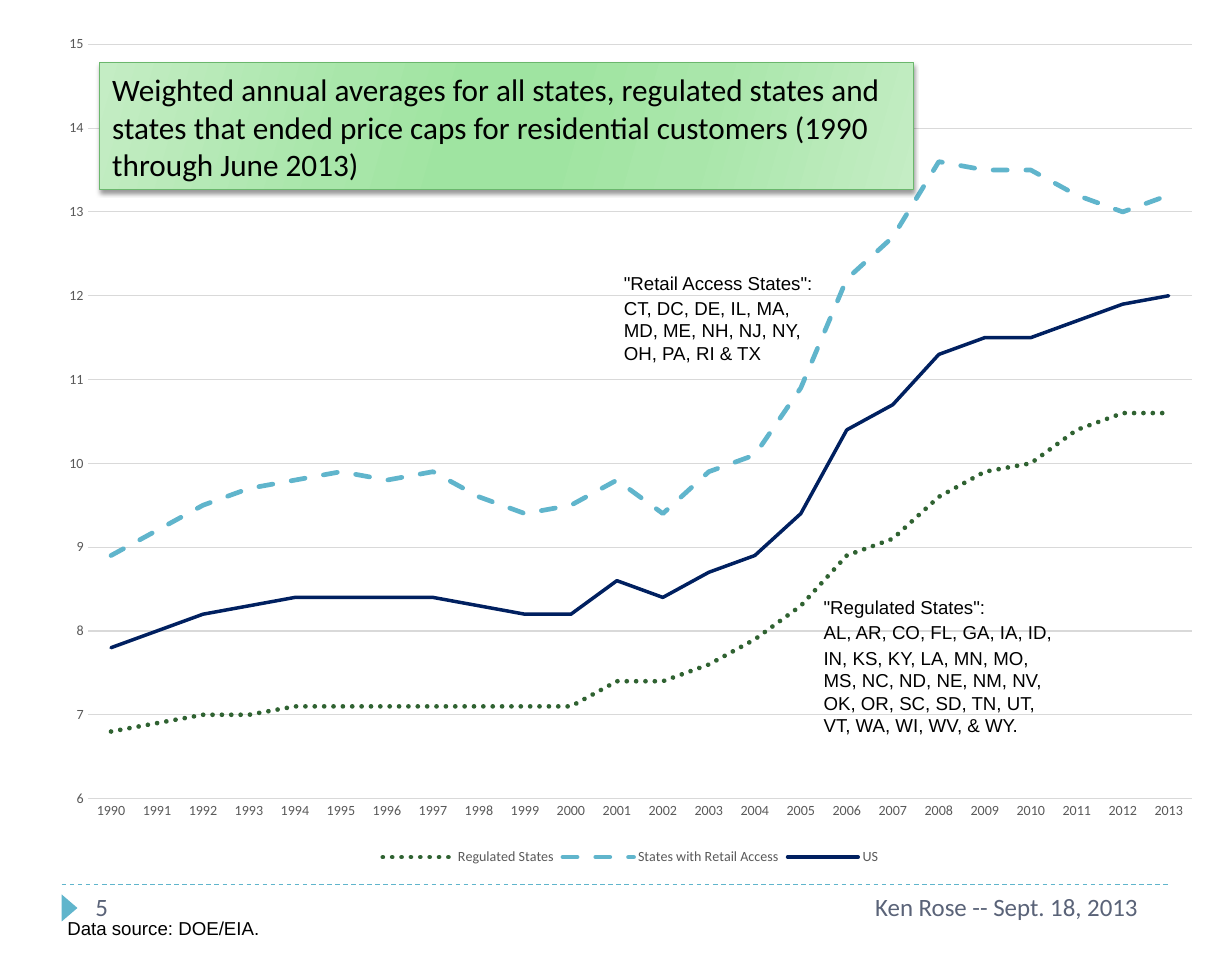
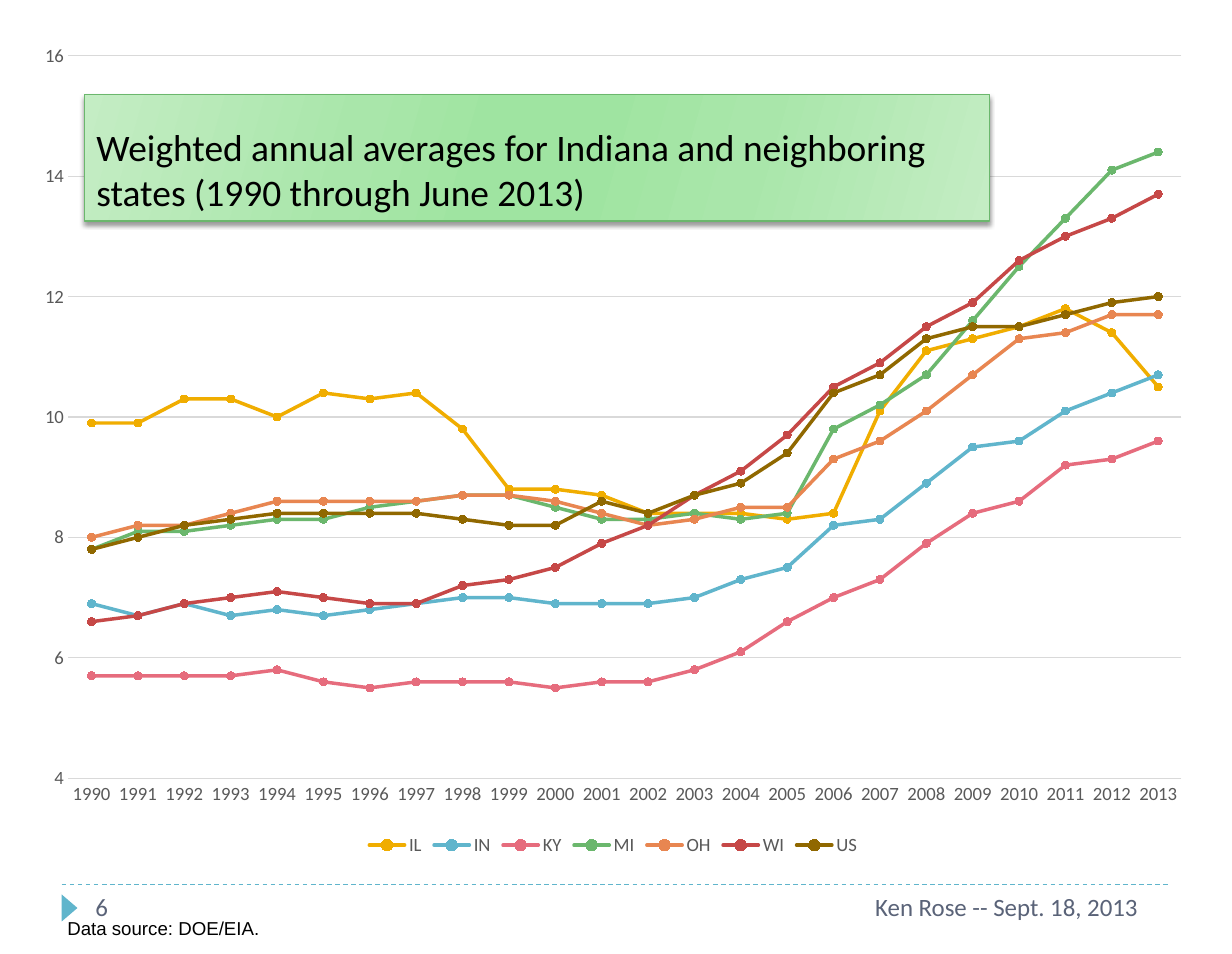
import pptx
import pptx.chart.data
import pptx.dml.color
import pptx.enum.chart
import pptx.enum.dml
import pptx.enum.shapes
import pptx.enum.text
import pptx.oxml
import pptx.oxml.ns
import pptx.util

Inches = pptx.util.Inches
Pt = pptx.util.Pt
RGB = pptx.dml.color.RGBColor
DASH = pptx.enum.dml.MSO_LINE.DASH
DOT = pptx.enum.dml.MSO_LINE.ROUND_DOT
SHAPE = pptx.enum.shapes.MSO_SHAPE
ANCHOR = pptx.enum.text.MSO_ANCHOR
CHART = pptx.enum.chart

BLACK = RGB(0x00, 0x00, 0x00)
SLATE = RGB(0x5A, 0x63, 0x78)
GREY = RGB(0x59, 0x59, 0x59)
GRID = RGB(0xD9, 0xD9, 0xD9)
SKY = RGB(0x60, 0xB5, 0xCC)
GREEN = RGB(0x6B, 0xB7, 0x6D)
FOREST = RGB(0x2F, 0x62, 0x31)
NAVY = RGB(0x00, 0x20, 0x60)
AMBER = RGB(0xF0, 0xAD, 0x00)
ROSE = RGB(0xE6, 0x6C, 0x7D)
ORANGE = RGB(0xE8, 0x86, 0x51)
RED = RGB(0xC6, 0x48, 0x47)
BROWN = RGB(0x90, 0x68, 0x00)
PALE_GREEN = RGB(0xC4, 0xED, 0xC4)
MID_GREEN = RGB(0xA9, 0xE6, 0xAA)
BRIGHT_GREEN = RGB(0x9F, 0xE4, 0xA1)
TITLE_STOPS = [(0, PALE_GREEN), (30, MID_GREEN), (45, BRIGHT_GREEN),
               (55, BRIGHT_GREEN), (73, MID_GREEN), (100, PALE_GREEN)]

HEAD_FONT = "Calibri"
NOTE_FONT = "Arial"
INSETS = (0.11, 0.06)

YEARS = [str(year) for year in range(1990, 2014)]
US = [7.8, 8, 8.2, 8.3, 8.4, 8.4, 8.4, 8.4, 8.3, 8.2, 8.2, 8.6,
      8.4, 8.7, 8.9, 9.4, 10.4, 10.7, 11.3, 11.5, 11.5, 11.7, 11.9, 12]
# name, colour, line width, dash, values
ACCESS_SERIES = [
    ("Regulated States", FOREST, 3, DOT,
     [6.8, 6.9, 7, 7, 7.1, 7.1, 7.1, 7.1, 7.1, 7.1, 7.1, 7.4,
      7.4, 7.6, 7.9, 8.3, 8.9, 9.1, 9.6, 9.9, 10, 10.4, 10.6, 10.6]),
    ("States with Retail Access", SKY, 3, DASH,
     [8.9, 9.2, 9.5, 9.7, 9.8, 9.9, 9.8, 9.9, 9.6, 9.4, 9.5, 9.8,
      9.4, 9.9, 10.1, 10.9, 12.2, 12.7, 13.6, 13.5, 13.5, 13.2, 13, 13.2]),
    ("US", NAVY, 2.25, None, US),
]
STATE_SERIES = [(name, color, 2.25, None, values) for name, color, values in [
    ("IL", AMBER,
     [9.9, 9.9, 10.3, 10.3, 10, 10.4, 10.3, 10.4, 9.8, 8.8, 8.8, 8.7,
      8.4, 8.4, 8.4, 8.3, 8.4, 10.1, 11.1, 11.3, 11.5, 11.8, 11.4, 10.5]),
    ("IN", SKY,
     [6.9, 6.7, 6.9, 6.7, 6.8, 6.7, 6.8, 6.9, 7, 7, 6.9, 6.9,
      6.9, 7, 7.3, 7.5, 8.2, 8.3, 8.9, 9.5, 9.6, 10.1, 10.4, 10.7]),
    ("KY", ROSE,
     [5.7, 5.7, 5.7, 5.7, 5.8, 5.6, 5.5, 5.6, 5.6, 5.6, 5.5, 5.6,
      5.6, 5.8, 6.1, 6.6, 7, 7.3, 7.9, 8.4, 8.6, 9.2, 9.3, 9.6]),
    ("MI", GREEN,
     [7.8, 8.1, 8.1, 8.2, 8.3, 8.3, 8.5, 8.6, 8.7, 8.7, 8.5, 8.3,
      8.3, 8.4, 8.3, 8.4, 9.8, 10.2, 10.7, 11.6, 12.5, 13.3, 14.1, 14.4]),
    ("OH", ORANGE,
     [8, 8.2, 8.2, 8.4, 8.6, 8.6, 8.6, 8.6, 8.7, 8.7, 8.6, 8.4,
      8.2, 8.3, 8.5, 8.5, 9.3, 9.6, 10.1, 10.7, 11.3, 11.4, 11.7, 11.7]),
    ("WI", RED,
     [6.6, 6.7, 6.9, 7, 7.1, 7, 6.9, 6.9, 7.2, 7.3, 7.5, 7.9,
      8.2, 8.7, 9.1, 9.7, 10.5, 10.9, 11.5, 11.9, 12.6, 13, 13.3, 13.7]),
    ("US", BROWN, US),
]]


def box(left, top, width, height):
    return Inches(left), Inches(top), Inches(width), Inches(height)


def drawing_xml(text):
    return pptx.oxml.parse_xml(
        text.replace(">", f" {pptx.oxml.ns.nsdecls('a')}>", 1))


def set_font(font, size, color, name=HEAD_FONT):
    font.size = Pt(size)
    font.name = name
    font.color.rgb = color


def write(tf, *lines, size, color=BLACK, font=HEAD_FONT, insets=INSETS,
          anchor=ANCHOR.TOP, space_after=0):
    """Fill a text frame with one paragraph for each line."""
    tf.word_wrap = True
    tf.vertical_anchor = anchor
    tf.margin_left = tf.margin_right = Inches(insets[0])
    tf.margin_top = tf.margin_bottom = Inches(insets[1])
    for i, line in enumerate(lines):
        p = tf.add_paragraph() if i else tf.paragraphs[0]
        p.alignment = pptx.enum.text.PP_ALIGN.LEFT
        p.space_after = Pt(space_after)
        r = p.add_run()
        r.text = line
        set_font(r.font, size, color, font)


def add_text(s, at, *lines, **style):
    write(s.shapes.add_textbox(*box(*at)).text_frame, *lines, **style)


def add_note(s, at, *lines):
    add_text(s, at, *lines, size=12, font=NOTE_FONT, insets=(0, 0),
             space_after=1.8)


def add_footer(s, number):
    rule = s.shapes.add_connector(
        pptx.enum.shapes.MSO_CONNECTOR.STRAIGHT,
        Inches(0.55), Inches(7.88), Inches(10.43), Inches(7.88))
    rule.line.color.rgb = SKY
    rule.line.width = Pt(0.75)
    rule.line.dash_style = DASH
    rule.element.spPr.append(drawing_xml("<a:effectLst></a:effectLst>"))

    arrow = s.shapes.add_shape(SHAPE.ISOSCELES_TRIANGLE,
                               *box(0.5, 8.02, 0.24, 0.14))
    arrow.rotation = 90
    arrow.shadow.inherit = False
    arrow.fill.solid()
    arrow.fill.fore_color.rgb = SKY
    arrow.line.fill.background()

    add_text(s, (7.69, 7.88, 2.75, 0.45), "Ken Rose -- Sept. 18, 2013",
             size=16, color=SLATE)
    add_text(s, (0.74, 7.88, 2.38, 0.45), str(number), size=16, color=SLATE)


def add_title(s, at, text, size):
    """Add the green gradient panel that holds the slide title."""
    sp = s.shapes.add_shape(SHAPE.RECTANGLE, *box(*at))
    sp.line.color.rgb = GREEN
    sp.line.width = Pt(0.75)
    stops = "".join(
        f'<a:gs pos="{pos * 1000}"><a:srgbClr val="{color}"/></a:gs>'
        for pos, color in TITLE_STOPS)
    spPr = sp.element.spPr
    spPr.find(pptx.oxml.ns.qn("a:ln")).addprevious(drawing_xml(
        f'<a:gradFill><a:gsLst>{stops}</a:gsLst>'
        f'<a:lin ang="{16 * 60000}" scaled="0"/></a:gradFill>'))
    spPr.append(drawing_xml(
        f'<a:effectLst><a:outerShdw blurRad="{Pt(3)}" dist="{Pt(2)}" '
        'dir="5400000" rotWithShape="0"><a:srgbClr val="000000">'
        '<a:alpha val="40000"/></a:srgbClr></a:outerShdw></a:effectLst>'))
    write(sp.text_frame, text, size=size, anchor=ANCHOR.BOTTOM)


def style_axis(axis, size):
    axis.major_tick_mark = axis.minor_tick_mark = CHART.XL_TICK_MARK.NONE
    set_font(axis.tick_labels.font, size, GREY)


def style_series(series, color, width, dash, markers):
    series.smooth = False
    line = series.format.line
    line.color.rgb = color
    line.width = Pt(width)
    if dash:
        line.dash_style = dash
    series.format.line._get_or_add_ln().set("cap", "rnd")
    if markers:
        series.marker.style = CHART.XL_MARKER_STYLE.CIRCLE
        series.marker.size = 5
        series.marker.format.fill.solid()
        series.marker.format.fill.fore_color.rgb = color
        series.marker.format.line.color.rgb = color


def add_line_chart(s, at, rows, low, high, step, size, markers=False):
    data = pptx.chart.data.CategoryChartData()
    data.categories = YEARS
    for name, _, _, _, values in rows:
        data.add_series(name, values)
    types = CHART.XL_CHART_TYPE
    chart = s.shapes.add_chart(types.LINE_MARKERS if markers else types.LINE,
                               *box(*at), data).chart
    set_font(chart.font, 10, BLACK)
    chart.has_title = False
    chart.has_legend = True
    chart.legend.position = CHART.XL_LEGEND_POSITION.BOTTOM
    chart.legend.include_in_layout = False
    set_font(chart.legend.font, size, GREY)

    years, prices = chart.category_axis, chart.value_axis
    style_axis(years, size)
    style_axis(prices, size)
    prices.minimum_scale = low
    prices.maximum_scale = high
    prices.major_unit = step
    prices.format.line.fill.background()
    for line in (years.format.line, prices.major_gridlines.format.line):
        line.color.rgb = GRID
        line.width = Pt(0.75)

    plot = chart.plots[0]
    plot.vary_by_categories = False
    for series, (_, color, width, dash, _) in zip(plot.series, rows):
        style_series(series, color, width, dash, markers)


def add_slide(prs, number):
    s = prs.slides.add_slide(prs.slide_layouts[6])
    add_footer(s, number)
    return s


def main():
    prs = pptx.Presentation()
    prs.slide_width, prs.slide_height = Inches(10.98), Inches(8.5)
    source_at, source = (0.6, 8.17, 6.12, 0.2), "Data source: DOE/EIA."

    s = add_slide(prs, 5)
    add_line_chart(s, (0.41, 0.17, 10.42, 7.58), ACCESS_SERIES, 6, 15, 1, 9)
    add_note(s, source_at, source)
    add_note(s, (5.56, 2.42, 1.76, 0.84), '"Retail Access States":',
             "CT, DC, DE, IL, MA, MD, ME, NH, NJ, NY, OH, PA, RI & TX")
    add_note(s, (7.34, 5.31, 2.07, 1.27), '"Regulated States":',
             "AL, AR, CO, FL, GA, IA, ID,",
             "IN, KS, KY, LA, MN, MO, MS, NC, ND, NE, NM, NV, "
             "OK, OR, SC, SD, TN, UT, VT, WA, WI, WV, & WY.")
    add_title(s, (0.89, 0.56, 7.25, 1.13),
              "Weighted annual averages for all states, regulated states and "
              "states that ended price caps for residential customers "
              "(1990 through June 2013)", 20)

    s = add_slide(prs, 6)
    add_line_chart(s, (0.19, 0.25, 10.55, 7.42), STATE_SERIES, 4, 16, 2, 12,
                   markers=True)
    add_note(s, source_at, source)
    add_title(s, (0.75, 0.84, 8.07, 1.13),
              "Weighted annual averages for Indiana and neighboring states "
              "(1990 through June 2013)", 24)

    prs.save("out.pptx")


if __name__ == "__main__":
    main()
